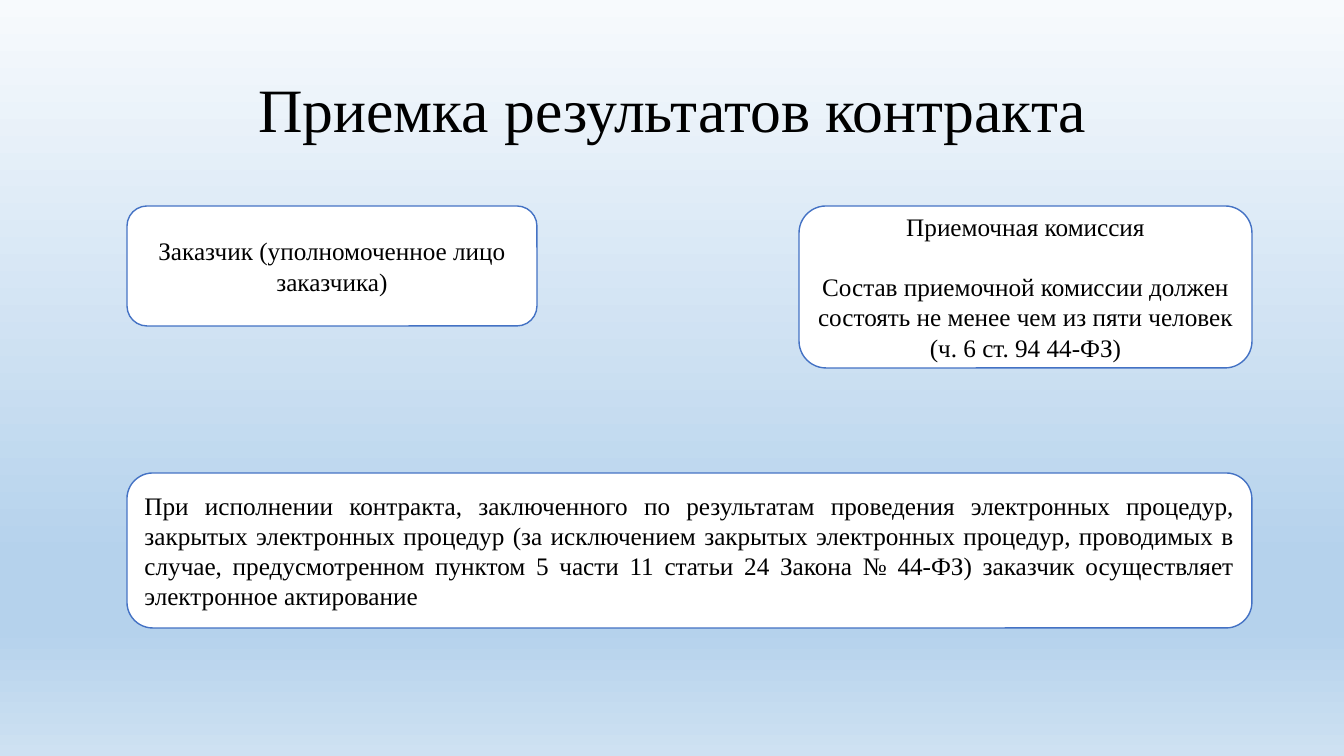
from copy import deepcopy

from pptx import Presentation
from pptx.dml.color import RGBColor
from pptx.enum.shapes import MSO_SHAPE
from pptx.enum.text import MSO_ANCHOR, PP_ALIGN
from pptx.oxml.ns import qn
from pptx.util import Pt

ROUND = MSO_SHAPE.ROUNDED_RECTANGLE
MIDDLE = MSO_ANCHOR.MIDDLE
CENTER, JUSTIFY = PP_ALIGN.CENTER, PP_ALIGN.JUSTIFY

BLACK = RGBColor(0x00, 0x00, 0x00)
WHITE = RGBColor(0xFF, 0xFF, 0xFF)
BLUE = RGBColor(0x44, 0x72, 0xC4)
PALE = RGBColor(0xF7, 0xFA, 0xFD)
SKY = RGBColor(0xB5, 0xD2, 0xEC)
MIST = RGBColor(0xCE, 0xE1, 0xF2)
FONT = "Times New Roman"

# Content
TITLE = "Приемка результатов контракта"
STOPS = [(0, PALE), (0.74, SKY), (0.83, SKY), (1, MIST)]
LEFT, RIGHT, TOP = 127, 1252, 206
BOXES = [
    ((LEFT, TOP, 410, 120), CENTER,
     ["Заказчик (уполномоченное лицо заказчика)"]),
    ((RIGHT - 453, TOP, 453, 162), CENTER,
     ["Приемочная комиссия",
      "Состав приемочной комиссии должен состоять не менее чем из пяти "
      "человек (ч. 6 ст. 94 44-ФЗ)"]),
    ((LEFT, 473, RIGHT - LEFT, 155), JUSTIFY,
     ["При исполнении контракта, заключенного по результатам проведения "
      "электронных процедур, закрытых электронных процедур (за исключением "
      "закрытых электронных процедур, проводимых в случае, предусмотренном "
      "пунктом 5 части 11 статьи 24 Закона № 44-ФЗ) заказчик осуществляет "
      "электронное актирование"]),
]


def px(n):
    return round(n * 914400 / 100.8)


def write(shape, lines, size, align, gap=0):
    frame = shape.text_frame
    frame.text = "\n".join(lines)
    frame.word_wrap = True
    frame.vertical_anchor = MIDDLE
    for i, para in enumerate(frame.paragraphs):
        para.alignment = align
        if i:
            para.space_before = Pt(gap)
        for run in para.runs:
            run.font.name = FONT
            run.font.size = Pt(size)
            run.font.color.rgb = BLACK


deck = Presentation()
deck.slide_width, deck.slide_height = px(1344), px(756)
slide = deck.slides.add_slide(deck.slide_layouts[5])

# Background gradient, top to bottom
fill = slide.background.fill
fill.gradient()
fill.gradient_angle = 270
stops = slide.element.find(".//" + qn("a:gsLst"))
while len(stops) < len(STOPS):
    stops.append(deepcopy(stops[0]))
for stop, (place, color) in zip(fill.gradient_stops, STOPS):
    stop.position = place
    stop.color.rgb = color

# Title
title = slide.shapes.title
title.left, title.top, title.width, title.height = map(px, (93, 40, 1159, 146))
write(title, [TITLE], 44, CENTER)
title.text_frame.paragraphs[0].line_spacing = 0.9

# Rounded boxes
for place, align, lines in BOXES:
    box = slide.shapes.add_shape(ROUND, *map(px, place))
    box.shadow.inherit = False
    box.fill.solid()
    box.fill.fore_color.rgb = WHITE
    box.line.color.rgb = BLUE
    box.line.width = Pt(1)
    write(box, lines, 18, align, gap=21)

deck.save("out.pptx")
